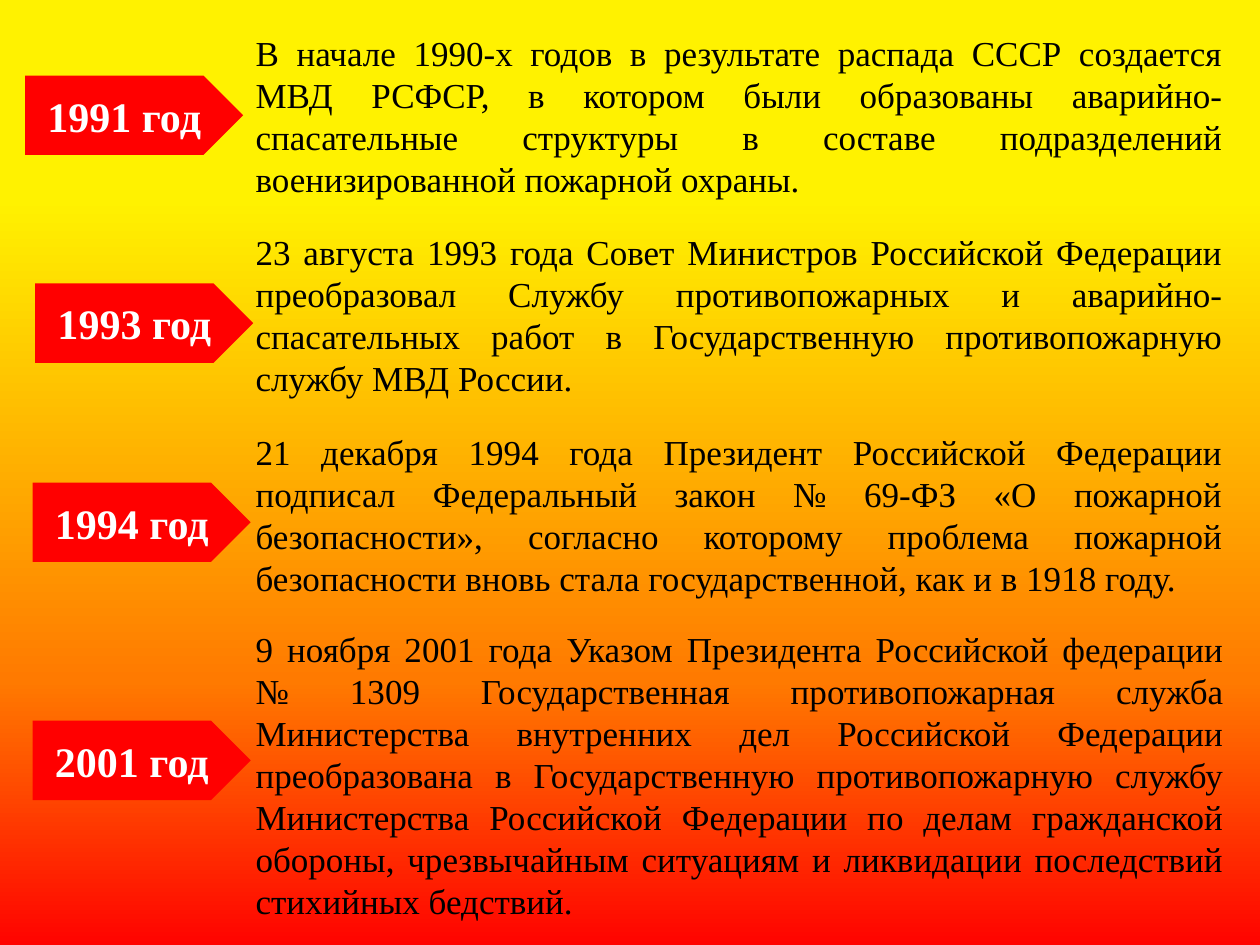
import copy
import pptx
import pptx.util
import pptx.dml.color
import pptx.enum.shapes
import pptx.enum.text

COLORS = {"yellow": "FFF200", "orange": "FF7A00", "red": "FF0300", "dark": "4D0808",
          "arrow": "FF0000", "white": "FFFFFF", "black": "000000"}
STOPS = [(0.21, "yellow"), (0.72, "orange"), (1, "red"), (1, "dark")]
ALIGN = pptx.enum.text.PP_ALIGN
BODY = {"size": pptx.util.Pt(20), "name": "Times New Roman", "bold": False}
YEAR = {"size": pptx.util.Pt(24), "name": "Times New Roman", "bold": True}
COLUMNS, ROWS = 100, 75

EVENTS = [
    "В начале 1990-х годов в результате распада СССР создается МВД РСФСР, в котором были образованы аварийно-спасательные структуры в составе подразделений военизированной пожарной охраны.",
    "23 августа 1993 года Совет Министров Российской Федерации преобразовал Службу противопожарных и аварийно-спасательных работ в Государственную противопожарную службу МВД России.",
    "21 декабря 1994 года Президент Российской Федерации подписал Федеральный закон № 69-ФЗ «О пожарной безопасности», согласно которому проблема пожарной безопасности вновь стала государственной, как и в 1918 году.",
]
LAST_EVENT = "9 ноября 2001 года Указом Президента Российской федерации № 1309 Государственная противопожарная служба Министерства внутренних дел Российской Федерации преобразована в Государственную противопожарную службу Министерства Российской Федерации по делам гражданской обороны, чрезвычайным ситуациям и ликвидации последствий стихийных бедствий."
YEARS = [("1991 год", 2, 6), ("1993 год", 2.8, 22.5),
         ("1994 год", 2.6, 38.3), ("2001 год", 2.6, 57.2)]


class Deck:
    def __init__(self):
        self.prs = pptx.Presentation()
        self.prs.slide_width = pptx.util.Inches(10)
        self.prs.slide_height = pptx.util.Inches(7.5)
        self.s = self.prs.slides.add_slide(self.prs.slide_layouts[6])

    def color(self, name):
        return pptx.dml.color.RGBColor.from_string(COLORS[name])

    def box(self, x, y, w, h):
        col = self.prs.slide_width / COLUMNS
        row = self.prs.slide_height / ROWS
        return int(x * col), int(y * row), int(w * col), int(h * row)

    def background(self, stops):
        fill = self.s.background.fill
        fill.gradient()
        fill.gradient_angle = 270
        gs_list = self.s.element.xpath(".//a:gsLst")[0]
        while len(gs_list) < len(stops):
            gs_list.append(copy.deepcopy(gs_list[0]))
        for stop, (position, name) in zip(fill.gradient_stops, stops):
            stop.position = position
            stop.color.rgb = self.color(name)

    def paragraphs(self, tf, texts, style, color, align, gap=0):
        tf.word_wrap = True
        for i, text in enumerate(texts):
            p = tf.add_paragraph() if i else tf.paragraphs[0]
            p.alignment = align
            if i:
                p.space_before = pptx.util.Pt(gap)
            r = p.add_run()
            r.text = text
            for key, value in style.items():
                setattr(r.font, key, value)
            r.font.color.rgb = self.color(color)

    def text(self, texts, x, y, w, h, gap=0):
        sp = self.s.shapes.add_textbox(*self.box(x, y, w, h))
        self.paragraphs(sp.text_frame, texts, BODY, "black", ALIGN.JUSTIFY, gap)

    def arrow(self, label, x, y):
        sp = self.s.shapes.add_shape(pptx.enum.shapes.MSO_SHAPE.PENTAGON,
                                     *self.box(x, y, 17.3, 6.3))
        sp.shadow.inherit = False
        sp.fill.solid()
        sp.fill.fore_color.rgb = self.color("arrow")
        sp.line.fill.background()
        sp.text_frame.vertical_anchor = pptx.enum.text.MSO_ANCHOR.MIDDLE
        self.paragraphs(sp.text_frame, [label], YEAR, "white", ALIGN.CENTER)


def main():
    deck = Deck()
    deck.background(STOPS)
    deck.text(EVENTS, 19.3, 2, 78.7, 46, gap=18)
    deck.text([LAST_EVENT], 19.3, 49.3, 78.8, 24.6)
    for year in YEARS:
        deck.arrow(*year)
    deck.prs.save("out.pptx")


if __name__ == "__main__":
    main()
